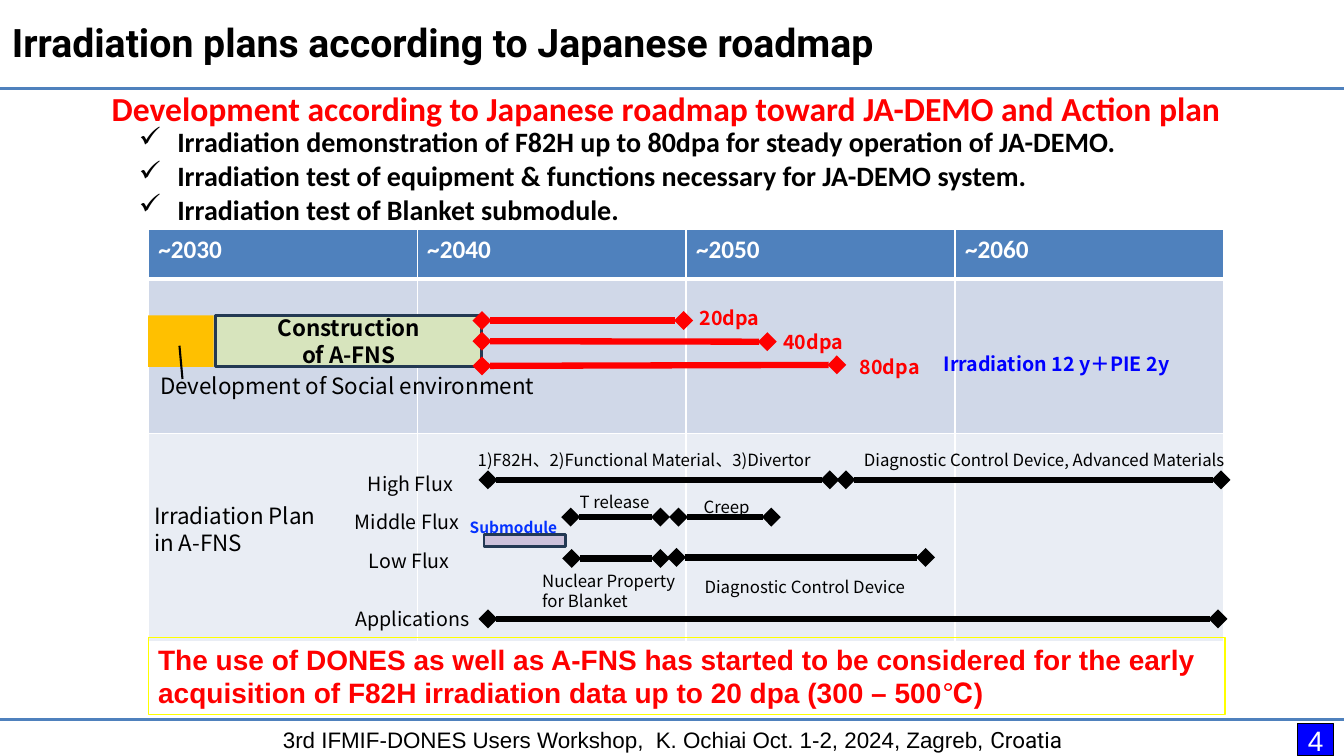
from dataclasses import dataclass
from lxml import etree
from pptx import Presentation
from pptx.dml.color import RGBColor
from pptx.enum.shapes import MSO_CONNECTOR, MSO_SHAPE
from pptx.enum.text import MSO_ANCHOR, PP_ALIGN
from pptx.oxml.ns import qn
from pptx.util import Inches, Pt

LINE, RECT = MSO_CONNECTOR.STRAIGHT, MSO_SHAPE.RECTANGLE
LEFT, MID, FULL = PP_ALIGN.LEFT, PP_ALIGN.CENTER, PP_ALIGN.JUSTIFY
TOP, CENTER = MSO_ANCHOR.TOP, MSO_ANCHOR.MIDDLE


@dataclass(frozen=True)
class Theme:
    black: str = "000000"
    white: str = "FFFFFF"
    red: str = "FF0000"
    blue: str = "0000FF"
    azure: str = "0432FF"
    steel: str = "4F81BD"
    navy: str = "233953"
    green: str = "D7E4BD"
    amber: str = "FFC000"
    lilac: str = "CCC1DA"
    yellow: str = "FFFF00"
    bands: tuple = ("4F81BD", "D0D8E8", "E9EDF4")
    label: str = "Noto Sans CJK JP"
    body: str = "Calibri"
    plain: str = "Arial"
    head: str = "Roboto"
    tiny: int = 11
    note: int = 12
    small: int = 14
    text: int = 16
    year: int = 18
    large: int = 20
    lead: int = 24
    title: int = 28


T = Theme()

# Content
TITLE = "Irradiation plans according to Japanese roadmap"
LEAD = "Development according to Japanese roadmap toward JA-DEMO and Action plan"
GOALS = [
    "Irradiation demonstration of F82H up to 80dpa for steady operation of JA-DEMO.",
    "Irradiation test of equipment & functions necessary for JA-DEMO system.",
    "Irradiation test of Blanket submodule.",
]
YEARS = ["~2030", "~2040", "~2050", "~2060"]
ROWS = [0.49, 1.53, 2.07]
CLAIM = ("The use of DONES as well as A-FNS has started to be considered for the early "
         "acquisition of F82H irradiation data up to 20 dpa (300 – 500℃)")
VENUE = "3rd IFMIF-DONES Users Workshop,  K. Ochiai Oct. 1-2, 2024, Zagreb, "
PLACE = "Croatia"
PAGE = "4"

# Labels by style: text, left, top, width, height
LABELS = [
    ((T.small, T.red, True), [
        ("20dpa", 6.84, 2.99, 0.9, 0.34),
        ("40dpa", 7.67, 3.22, 0.9, 0.34),
        ("80dpa", 8.43, 3.47, 0.97, 0.34)]),
    ((T.small, T.blue, True), [
        ("Irradiation 12 y＋PIE 2y", 9.26, 3.44, 2.89, 0.34)]),
    ((T.tiny, T.azure, True), [("Submodule", 4.56, 5.09, 1.19, 0.29)]),
    ((T.text, T.black, False), [
        ("Development of Social environment", 1.49, 3.64, 4.11, 0.37),
        ("Irradiation Plan in A-FNS", 1.43, 4.93, 1.9, 0.64)]),
    ((T.small, T.black, False), [
        ("High Flux", 3.55, 4.63, 1.46, 0.34),
        ("Middle Flux", 3.42, 5.01, 1.46, 0.34),
        ("Low Flux", 3.56, 5.4, 1.12, 0.34),
        ("Applications", 3.43, 5.97, 1.46, 0.34)]),
    ((T.note, T.black, False), [
        ("1)F82H、2)Functional Material、3)Divertor", 4.64, 4.41, 4.06, 0.3),
        ("Diagnostic Control Device, Advanced Materials", 8.47, 4.41, 4.17, 0.3),
        ("T release", 5.65, 4.83, 1.04, 0.3),
        ("Creep", 6.88, 4.88, 0.82, 0.3),
        ("Nuclear Property for Blanket", 5.28, 5.61, 1.67, 0.5),
        ("Diagnostic Control Device", 6.89, 5.67, 2.47, 0.3)]),
]

# Time spans: start x, start y, end x, end y
DOSES = [(4.78, 3.18, 6.78, 3.18), (4.78, 3.63, 8.3, 3.62)]
JOINED = (4.78, 3.39, 7.61, 3.39)
SPANS = [
    (4.84, 4.76, 8.23), (8.39, 4.76, 12.11),
    (5.66, 5.13, 6.55), (6.73, 5.13, 7.65),
    (5.67, 5.54, 6.55), (6.71, 5.53, 9.18),
    (4.84, 6.14, 12.08),
]

deck = Presentation()
deck.slide_width, deck.slide_height = Inches(13.33), Inches(7.5)
slide = deck.slides.add_slide(deck.slide_layouts[6])


def color(code):
    return RGBColor.from_string(code)


def style(font, size, code, bold=False, face=T.label):
    font.size, font.bold, font.name = Pt(size), bold, face
    font.color.rgb = color(code)


def write(shape, lines, look, align=LEFT, anchor=TOP, mark=None):
    frame = shape.text_frame
    frame.word_wrap, frame.vertical_anchor = True, anchor
    for i, line in enumerate(lines):
        para = frame.add_paragraph() if i else frame.paragraphs[0]
        para.text, para.alignment = line, align
        if mark:
            props = para._p.get_or_add_pPr()
            props.set("marL", str(Inches(0.38)))
            props.set("indent", str(-Inches(0.38)))
            etree.SubElement(props, qn("a:buChar")).set("char", mark)
        style(para.font, *look)
    return frame


def text(spot, lines, look, **more):
    box = slide.shapes.add_textbox(*map(Inches, spot))
    return write(box, lines, look, **more)


def block(spot, fill=None, edge=None, width=2):
    shape = slide.shapes.add_shape(RECT, *map(Inches, spot))
    shape.shadow.inherit = False
    if fill:
        shape.fill.solid()
        shape.fill.fore_color.rgb = color(fill)
    else:
        shape.fill.background()
    if edge:
        shape.line.color.rgb = color(edge)
        shape.line.width = Pt(width)
    else:
        shape.line.fill.background()
    return shape


def rule(ends, code, width, tips=False):
    line = slide.shapes.add_connector(LINE, *map(Inches, ends))
    line.line.color.rgb, line.line.width = color(code), Pt(width)
    if tips:
        for tag in ("a:headEnd", "a:tailEnd"):
            etree.SubElement(line.line._ln, qn(tag)).set("type", "diamond")
    etree.SubElement(line._element.spPr, qn("a:effectLst"))
    return line


def border(cell, low):
    props = cell._tc.get_or_add_tcPr()
    sides = [("lnL", 1), ("lnR", 1), ("lnT", 1), ("lnB", low)]
    for i, (side, width) in enumerate(sides):
        edge = etree.Element(qn("a:" + side), w=str(Pt(width)))
        fill = etree.SubElement(edge, qn("a:solidFill"))
        etree.SubElement(fill, qn("a:srgbClr")).set("val", T.white)
        props.insert(i, edge)


# Frame lines and footer
for y in (0.88, 7.14):
    rule((0, y, 13.33, y), T.steel, 2.25)
foot = text((1.53, 7.15, 10.28, 0.37), [VENUE],
            (T.text, T.black, False, T.plain), align=MID)
place = foot.paragraphs[0].add_run()
place.text = PLACE
place.font.name = T.head

# Decade table
grid = slide.shapes.add_table(len(ROWS), len(YEARS), Inches(1.47), Inches(2.28),
                              Inches(10.67), Inches(sum(ROWS))).table
for r, height in enumerate(ROWS):
    grid.rows[r].height = Inches(height)
    for c, year in enumerate(YEARS):
        cell = grid.cell(r, c)
        cell.fill.solid()
        cell.fill.fore_color.rgb = color(T.bands[r])
        border(cell, 1 if r else 3)
        if r == 0:
            cell.text = year
            style(cell.text_frame.paragraphs[0].font, T.year, T.white, True, T.body)

# Building phase and submodule
build = block((2.14, 3.13, 2.64, 0.51), T.green, T.navy)
write(build, ["Construction", "of A-FNS"], (T.text, T.black, True),
      align=MID, anchor=CENTER)
block((1.47, 3.13, 0.65, 0.51), T.amber)
block((4.8, 5.3, 0.81, 0.12), T.lilac, T.navy)

# Labels and time spans
for look, items in LABELS:
    for words, *spot in items:
        text(spot, [words], look)
for ends in DOSES:
    rule(ends, T.red, 4.5, True)
rule(JOINED, T.red, 4.5, True).begin_connect(build, 3)
for start, y, end in SPANS:
    rule((start, y, end, y), T.black, 4.5, True)
rule((1.78, 3.43, 1.81, 3.76), T.black, 1.5)

# Headings, goals and claim
text((0.02, 0.07, 9.73, 0.68), [TITLE], (T.title, T.black, True, T.head),
     align=FULL, anchor=CENTER)
text((1.28, 1.19, 11.88, 1.11), GOALS, (T.large, T.black, True, T.body), mark="✓")
text((1.01, 0.82, 11.43, 0.5), [LEAD], (T.lead, T.red, True, T.body))
write(block((12.87, 7.18, 0.36, 0.32), T.blue, T.black, 0.75), [PAGE],
      (T.large, T.white, False, T.plain), align=MID, anchor=CENTER)
write(block((1.47, 6.32, 10.68, 0.77), None, T.yellow, 0.75), [CLAIM],
      (T.large, T.red, True, T.plain))

deck.save("out.pptx")
